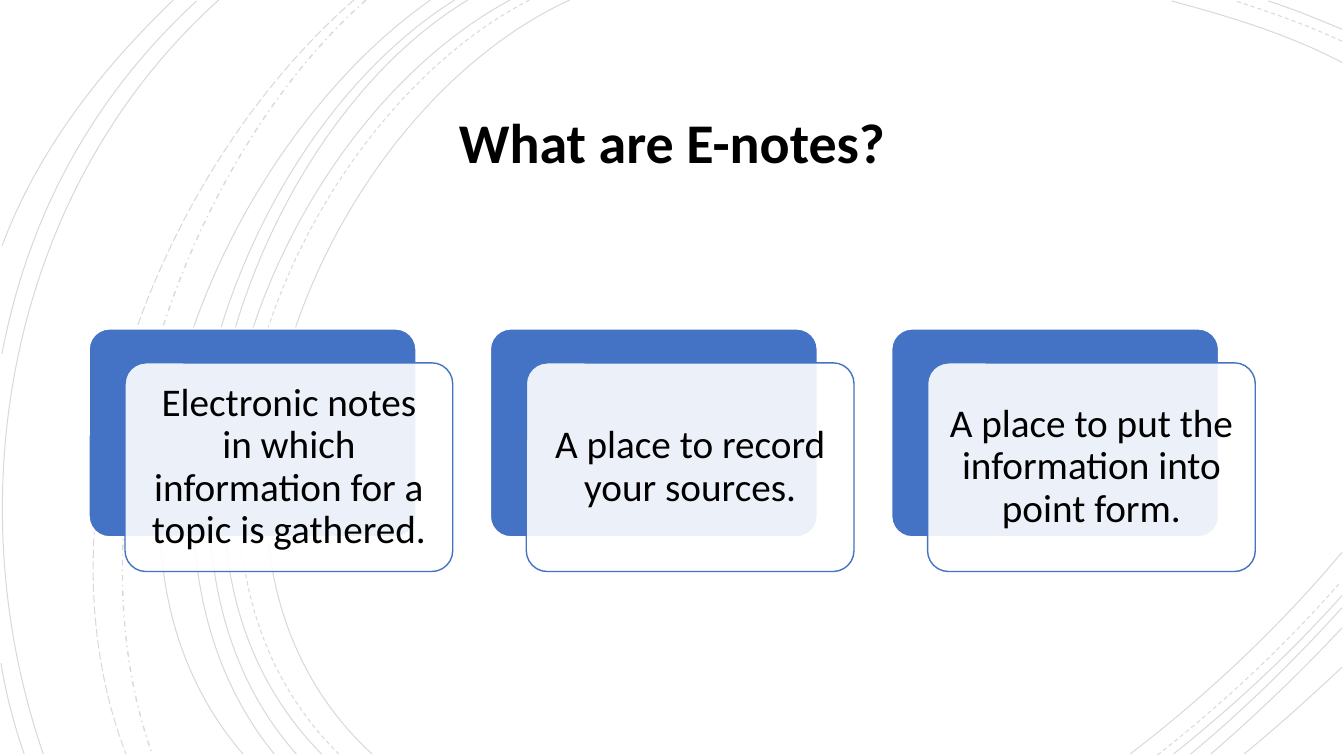
import lxml.etree
import pptx
import pptx.dml.color
import pptx.enum.dml
import pptx.enum.shapes
import pptx.enum.text
import pptx.oxml.ns
import pptx.util

PX = 9144
BLACK = pptx.dml.color.RGBColor(0x00, 0x00, 0x00)
WHITE = pptx.dml.color.RGBColor(0xFF, 0xFF, 0xFF)
BLUE = pptx.dml.color.RGBColor(0x44, 0x72, 0xC4)

SOLID = pptx.enum.dml.MSO_LINE.SOLID
DASH = pptx.enum.dml.MSO_LINE.DASH
DASH_DOT = pptx.enum.dml.MSO_LINE.DASH_DOT
LONG_DASH = pptx.enum.dml.MSO_LINE.LONG_DASH

ARCS = [
    (SOLID, (565, 0), (315, 115), (143, 540), (369, 748)),
    (SOLID, (1331, 62), (1278, 34), (1218, 16), (1162, 1)),
    (SOLID, (1121, 748), (1197, 690), (1269, 622), (1331, 548)),
    (DASH, (525, 0), (285, 125), (123, 537), (336, 748)),
    (DASH, (1331, 41), (1297, 25), (1260, 12), (1225, 1)),
    (DASH, (1148, 749), (1213, 698), (1275, 640), (1330, 577)),
    (SOLID, (506, 0), (270, 127), (110, 537), (319, 748)),
    (SOLID, (1331, 29), (1307, 19), (1283, 9), (1258, 1)),
    (SOLID, (1164, 748), (1223, 701), (1280, 648), (1331, 591)),
    (SOLID, (464, 0), (244, 133), (110, 541), (294, 748)),
    (SOLID, (1181, 748), (1234, 704), (1284, 655), (1331, 603)),
    (SOLID, (451, 0), (231, 138), (97, 533), (272, 748)),
    (SOLID, (1201, 748), (1246, 709), (1290, 667), (1331, 623)),
    (SOLID, (427, 0), (217, 147), (53, 529), (241, 748)),
    (SOLID, (1234, 748), (1267, 721), (1299, 692), (1331, 662)),
    (DASH_DOT, (363, 0), (176, 166), (65, 509), (151, 748)),
    (LONG_DASH, (351, 0), (157, 169), (29, 499), (125, 748)),
    (SOLID, (217, 0), (11, 185), (-46, 490), (43, 748)),
    (SOLID, (195, 1), (92, 96), (28, 214), (2, 351)),
    (SOLID, (1, 658), (6, 689), (14, 719), (24, 748)),
    (SOLID, (172, 0), (100, 69), (37, 150), (2, 244)),
]

CARD_TEXTS = [
    "Electronic notes in which information for a topic is gathered.",
    "A place to record your sources.",
    "A place to put the information into point form.",
]
CARD_LEFT, CARD_TOP, CARD_WIDTH, CARD_HEIGHT, CARD_PITCH = 88, 326, 325, 207, 398
PANEL_SHIFT_X, PANEL_SHIFT_Y = 36, 34

TITLE_FONT = {"name": "Calibri", "size": pptx.util.Pt(40), "bold": True}
CARD_FONT = {"name": "Calibri", "size": pptx.util.Pt(28), "bold": False}


def apply_format(target, values):
    for name, value in values.items():
        setattr(target, name, value)


def set_alpha(element, percent):
    for color in element.iter(pptx.oxml.ns.qn("a:srgbClr")):
        alpha = lxml.etree.SubElement(color, pptx.oxml.ns.qn("a:alpha"))
        alpha.set("val", str(percent * 1000))


def set_line(shape, color, points, dash=SOLID):
    shape.line.color.rgb = color
    apply_format(shape.line, {"width": pptx.util.Pt(points), "dash_style": dash})


def add_arc(slide, dash, start, *bezier_points):
    builder = slide.shapes.build_freeform(*start, scale=PX)
    builder.add_line_segments(bezier_points, close=False)
    shape = builder.convert_to_shape()
    shape.shadow.inherit = False
    shape.fill.background()
    set_line(shape, BLACK, 1 if dash == DASH_DOT else 0.75, dash)
    properties = shape.element.spPr
    set_alpha(properties, 15)

    segments = list(properties.iter(pptx.oxml.ns.qn("a:lnTo")))
    outline = segments[0].getparent()
    curve = lxml.etree.SubElement(outline, pptx.oxml.ns.qn("a:cubicBezTo"))
    for segment in segments:
        curve.append(segment[0])
        outline.remove(segment)


def write_text(shape, text, font, inset):
    frame = shape.text_frame
    apply_format(frame, {
        "word_wrap": True,
        "vertical_anchor": pptx.enum.text.MSO_ANCHOR.MIDDLE,
        "margin_left": inset * PX,
        "margin_right": inset * PX,
        "margin_top": inset * PX,
        "margin_bottom": inset * PX,
    })
    paragraph = frame.paragraphs[0]
    apply_format(paragraph, {
        "alignment": pptx.enum.text.PP_ALIGN.CENTER,
        "line_spacing": 0.9,
    })
    run = paragraph.add_run()
    run.text = text
    apply_format(run.font, font)
    run.font.color.rgb = BLACK


def add_title(slide, text):
    title = slide.shapes.add_textbox(192 * PX, 87 * PX, 949 * PX, 115 * PX)
    write_text(title, text, TITLE_FONT, 5)


def add_rounded_box(slide, left, top, fill, line, line_points):
    shape = slide.shapes.add_shape(
        pptx.enum.shapes.MSO_SHAPE.ROUNDED_RECTANGLE,
        left * PX, top * PX, CARD_WIDTH * PX, CARD_HEIGHT * PX)
    shape.adjustments[0] = 0.1
    shape.shadow.inherit = False
    shape.fill.solid()
    shape.fill.fore_color.rgb = fill
    set_line(shape, line, line_points)
    return shape


def add_card(slide, left, text):
    add_rounded_box(slide, left, CARD_TOP, BLUE, WHITE, 1.5)
    panel = add_rounded_box(slide, left + PANEL_SHIFT_X, CARD_TOP + PANEL_SHIFT_Y,
                            WHITE, BLUE, 1)
    set_alpha(panel.element.spPr.find(pptx.oxml.ns.qn("a:solidFill")), 90)
    write_text(panel, text, CARD_FONT, 12)


def main():
    presentation = pptx.Presentation()
    presentation.slide_width = 1333 * PX
    presentation.slide_height = 750 * PX
    slide = presentation.slides.add_slide(presentation.slide_layouts[6])
    for dash, *points in ARCS:
        add_arc(slide, dash, *points)
    add_title(slide, "What are E-notes?")
    for index, text in enumerate(CARD_TEXTS):
        add_card(slide, CARD_LEFT + index * CARD_PITCH, text)
    presentation.save("out.pptx")


if __name__ == "__main__":
    main()
